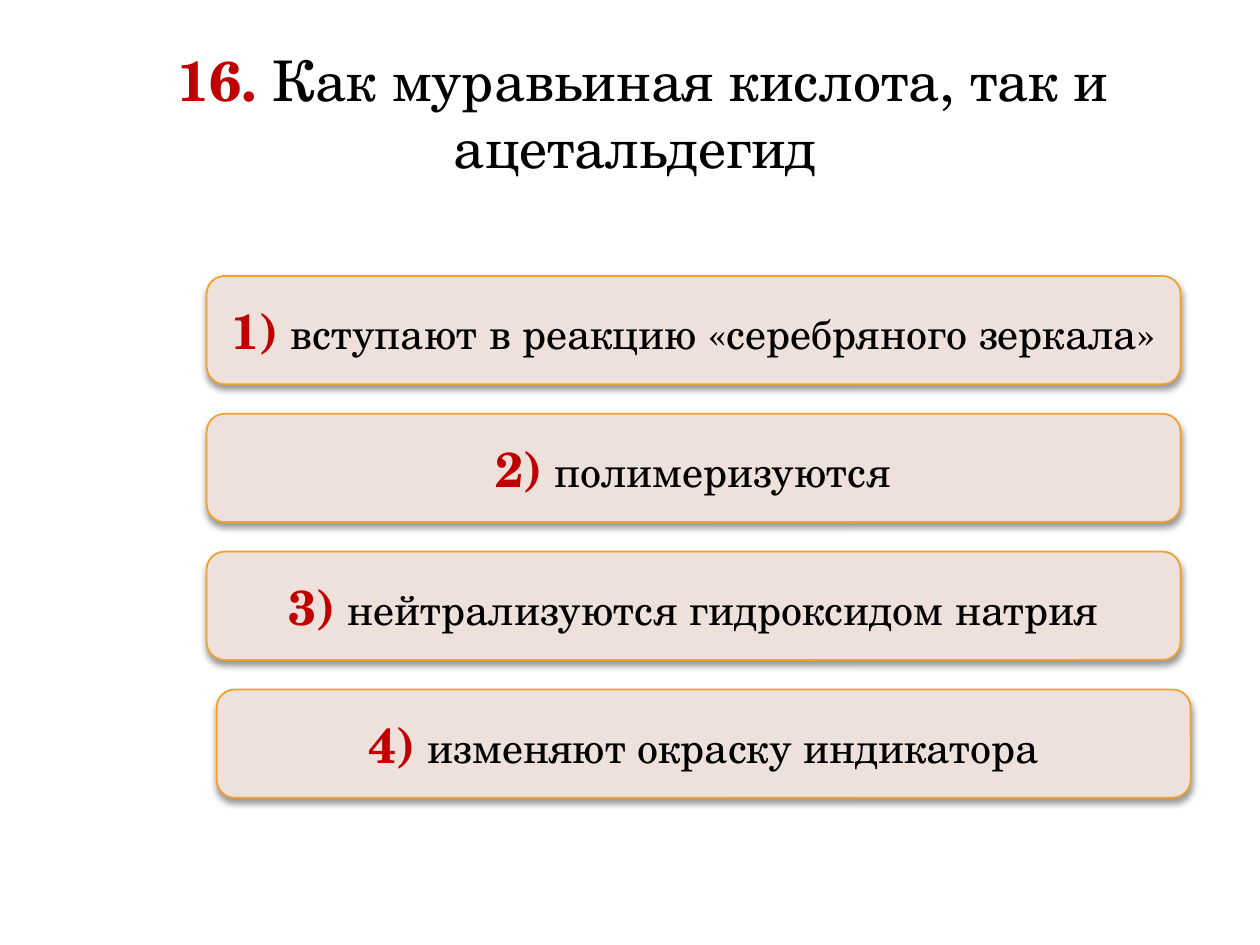
"""Build a quiz slide with one question and four answer cards."""
from lxml import etree
from pptx import Presentation
from pptx.dml.color import RGBColor
from pptx.enum import shapes, text
from pptx.oxml import ns
from pptx.util import Inches, Pt

FONT = "TeX Gyre Schola"
RED = RGBColor(0xC0, 0x00, 0x00)
BLACK = RGBColor(0x00, 0x00, 0x00)
CARD_FILL = RGBColor(0xEE, 0xE0, 0xDB)
CARD_LINE = RGBColor(0xF0, 0xA2, 0x2E)

ANSWERS = [
    "вступают в реакцию «серебряного зеркала»",
    "полимеризуются",
    "нейтрализуются гидроксидом натрия",
    "изменяют окраску индикатора",
]
CARD_LEFTS = [1.64, 1.64, 1.64, 1.72]
CARD_TOP, CARD_STEP = 2.19, 1.094


def add_span(para, words, size, color, bold=False):
    """Append one formatted run to a paragraph."""
    span = para.add_run()
    span.text = words
    span.font.name = FONT
    span.font.size = Pt(size)
    span.font.bold = bold
    span.font.color.rgb = color


def write_numbered(frame, number, number_size, words, size):
    """Write a centred line with a bold red number before the words."""
    frame.word_wrap = True
    para = frame.paragraphs[0]
    para.alignment = text.PP_ALIGN.CENTER
    add_span(para, number, number_size, RED, True)
    add_span(para, " " + words, size, BLACK)


def add_shadow(shape):
    """Give a shape a soft shadow that falls straight down."""
    shape.shadow.inherit = False
    effects = shape._element.spPr.find(ns.qn("a:effectLst"))
    outer = etree.SubElement(effects, ns.qn("a:outerShdw"), blurRad=str(Pt(4)),
                             dist=str(Pt(2)), dir="5400000", rotWithShape="0")
    color = etree.SubElement(outer, ns.qn("a:srgbClr"), val=str(BLACK))
    etree.SubElement(color, ns.qn("a:alpha"), val="40000")


def add_question(page, number, words):
    """Add the question at the top of the page."""
    box = page.shapes.add_textbox(Inches(1.09), Inches(0.31), Inches(8.03), Inches(1.72))
    write_numbered(box.text_frame, number, 32, words, 32)


def add_answer(page, left, top, number, words):
    """Add one rounded answer card."""
    card = page.shapes.add_shape(shapes.MSO_SHAPE.ROUNDED_RECTANGLE,
                                 Inches(left), Inches(top), Inches(7.73), Inches(0.86))
    card.fill.solid()
    card.fill.fore_color.rgb = CARD_FILL
    card.line.color.rgb = CARD_LINE
    card.line.width = Pt(1)
    add_shadow(card)
    card.text_frame.vertical_anchor = text.MSO_ANCHOR.MIDDLE
    write_numbered(card.text_frame, number, 28, words, 24)


def main():
    """Build and save the deck."""
    deck = Presentation()
    deck.slide_width, deck.slide_height = Inches(10), Inches(7.5)
    page = deck.slides.add_slide(deck.slide_layouts[6])
    add_question(page, "16.", "Как муравьиная кислота, так и ацетальдегид ")
    for index, (left, words) in enumerate(zip(CARD_LEFTS, ANSWERS)):
        add_answer(page, left, CARD_TOP + index * CARD_STEP, f"{index + 1})", words)
    deck.save("out.pptx")


if __name__ == "__main__":
    main()
